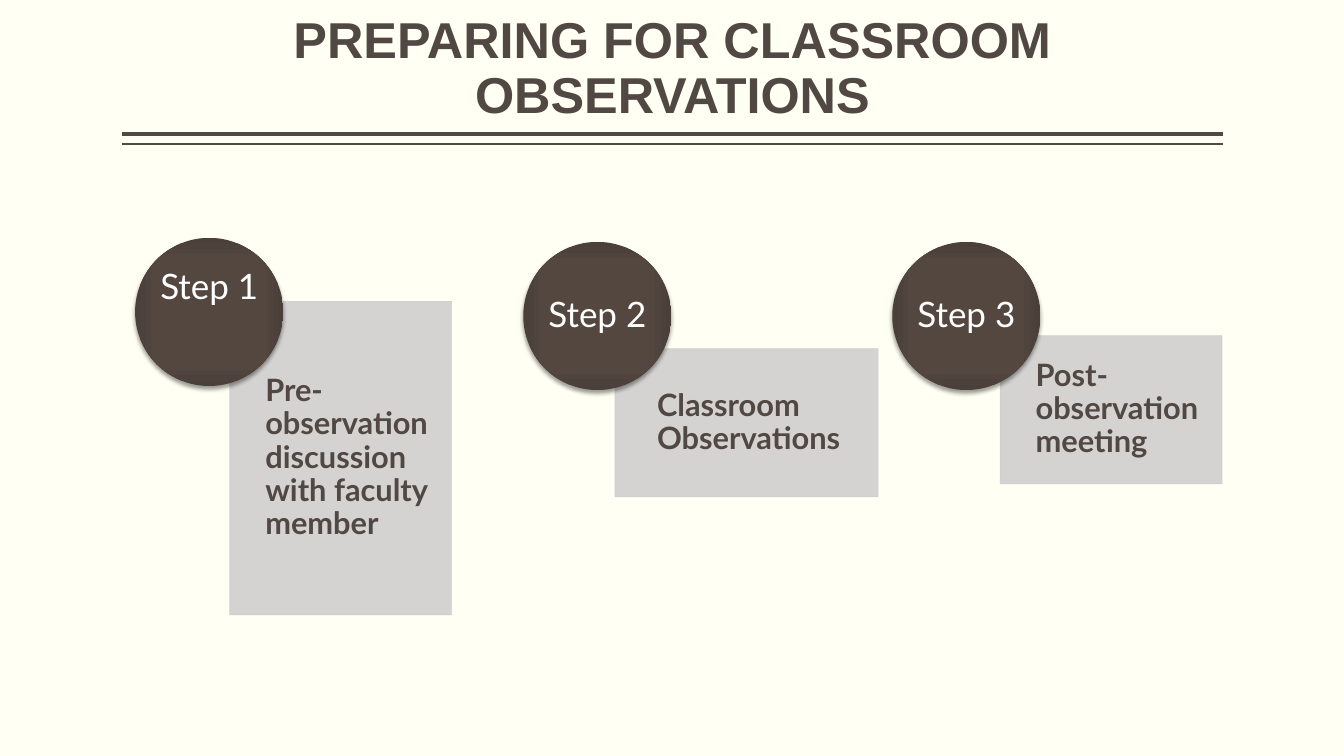
from lxml import etree
from pptx import Presentation
from pptx import util as u
from pptx.dml.color import RGBColor
from pptx.enum import shapes, text
from pptx.oxml import parse_xml
from pptx.oxml.ns import nsdecls, qn

In = u.Inches
COLORS = {
    "background": "FFFFF3",
    "ink": "514843",
    "card": "D0CFCF",
    "label": "FFFFFF",
    "shadow": "000000",
}
CIRCLE_STOPS = [(0, "544740"), (71, "534740"), (100, "4A3F39")]
CIRCLE = 1.47
LABEL = 1.04

# label, label height, circle (left, top), description, card (left, top, width, height)
STEPS = [
    ("Step 1", 0.56, (1.34, 2.36), "Pre-observation discussion with faculty member",
     (2.28, 2.99, 2.2, 3.11)),
    ("Step 2", LABEL, (5.19, 2.4), "Classroom Observations", (6.1, 3.46, 2.61, 1.47)),
    ("Step 3", LABEL, (8.85, 2.4), "Post-observation meeting", (9.92, 3.33, 2.2, 1.47)),
]


def rgb(name):
    return RGBColor.from_string(COLORS[name])


def set_alpha(fill_format, percent):
    """Make a solid fill partly transparent."""
    color = fill_format._xPr.find(qn("a:solidFill"))[0]
    etree.SubElement(color, qn("a:alpha"), val=str(percent * 1000))


def add_text(s, box, content, size, font, color, bold=False, align=text.PP_ALIGN.LEFT,
             anchor=text.MSO_ANCHOR.MIDDLE, insets=(0, 0, 0, 0)):
    tf = s.shapes.add_textbox(*map(In, box)).text_frame
    tf.word_wrap = True
    tf.vertical_anchor = anchor
    tf.margin_left, tf.margin_top, tf.margin_right, tf.margin_bottom = map(In, insets)
    p = tf.paragraphs[0]
    p.text = content
    p.alignment = align
    p.line_spacing = 0.9
    p.font.size = u.Pt(size)
    p.font.name = font
    p.font.bold = bold
    p.font.color.rgb = rgb(color)


def add_header(s, left, top, width, height):
    """Title with a thick and a thin rule under it."""
    add_text(s, (left, top, width, height), "PREPARING FOR CLASSROOM OBSERVATIONS",
             36, "Arial", "ink", True, text.PP_ALIGN.CENTER, text.MSO_ANCHOR.BOTTOM,
             (0, 0.05, 0, 0.05))
    for gap, weight in ((0.05, 3), (0.15, 1)):
        y = In(top + height + gap)
        rule = s.shapes.add_connector(shapes.MSO_CONNECTOR.STRAIGHT,
                                      In(left), y, In(left + width), y)
        rule.line.color.rgb = rgb("ink")
        rule.line.width = u.Pt(weight)
        etree.SubElement(rule._element.spPr, qn("a:effectLst"))


def add_card(s, left, top, width, height, description):
    sp = s.shapes.add_shape(shapes.MSO_SHAPE.RECTANGLE,
                            *map(In, (left, top, width, height)))
    sp.shadow.inherit = False
    sp.line.width = u.Pt(0.5)
    for fill in (sp.fill, sp.line.fill):
        fill.solid()
        fill.fore_color.rgb = rgb("card")
        set_alpha(fill, 90)
    indent = 0.16 * width
    add_text(s, (left + indent, top, width - indent, height), description,
             22, "Lato", "ink", True, insets=(0, 0.17, 0.17, 0.17))


def add_circle(s, left, top, label, label_height):
    """Shaded disc with a soft shadow and its step label."""
    sp = s.shapes.add_shape(shapes.MSO_SHAPE.OVAL, *map(In, (left, top, CIRCLE, CIRCLE)))
    stops = "".join(f'<a:gs pos="{pos * 1000}"><a:srgbClr val="{color}"/></a:gs>'
                    for pos, color in CIRCLE_STOPS)
    sp._element.spPr.insert(2, parse_xml(
        f'<a:gradFill {nsdecls("a")} rotWithShape="1"><a:gsLst>{stops}</a:gsLst>'
        '<a:path path="rect"><a:fillToRect l="50000" t="50000" r="50000" b="50000"/>'
        '</a:path></a:gradFill>'))
    sp.line.fill.background()
    sp.shadow.inherit = False
    sp._element.spPr.find(qn("a:effectLst")).append(parse_xml(
        f'<a:outerShdw {nsdecls("a")} blurRad="{u.Pt(3.1)}" dist="{u.Pt(2)}" '
        f'dir="5400000" rotWithShape="0"><a:srgbClr val="{COLORS["shadow"]}">'
        '<a:alpha val="38000"/></a:srgbClr></a:outerShdw>'))
    inset = (CIRCLE - LABEL) / 2
    add_text(s, (left + inset, top + inset, LABEL, label_height), label,
             25, "Lato", "label", align=text.PP_ALIGN.CENTER)


def main():
    prs = Presentation()
    prs.slide_width, prs.slide_height = In(13.33), In(7.5)
    s = prs.slides.add_slide(prs.slide_layouts[6])
    s.background.fill.solid()
    s.background.fill.fore_color.rgb = rgb("background")
    add_header(s, 1.21, 0.08, 10.92, 1.2)
    for label, label_height, circle, description, card in STEPS:
        add_card(s, *card, description)
        add_circle(s, *circle, label, label_height)
    prs.save("out.pptx")


if __name__ == "__main__":
    main()
